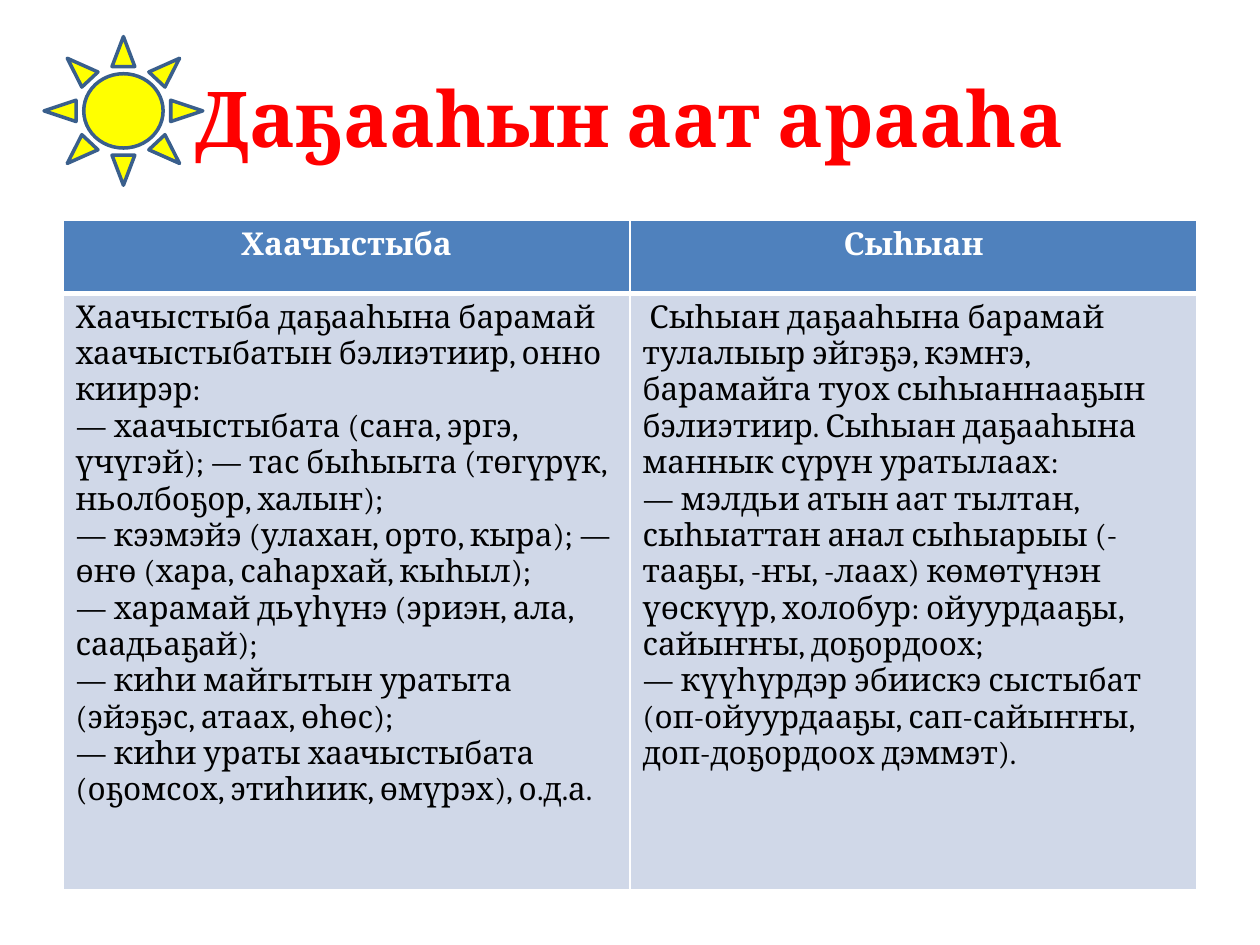
from lxml.etree import SubElement
from pptx import Presentation
from pptx.dml.color import RGBColor
from pptx.enum.shapes import MSO_SHAPE
from pptx.enum.text import MSO_ANCHOR, PP_ALIGN
from pptx.oxml.ns import qn
from pptx.util import Inches, Pt

TITLE = "Даҕааһын аат арааһа"
COLUMNS = [
    ("Хаачыстыба", [
        "Хаачыстыба даҕааһына барамай хаачыстыбатын бэлиэтиир, онно киирэр:",
        "— хаачыстыбата (саҥа, эргэ, үчүгэй); — тас быһыыта (төгүрүк, ньолбоҕор, халыҥ);",
        "— кээмэйэ (улахан, орто, кыра); — өҥө (хара, саһархай, кыһыл);",
        "— харамай дьүһүнэ (эриэн, ала, саадьаҕай);",
        "— киһи майгытын уратыта (эйэҕэс, атаах, өһөс);",
        "— киһи ураты хаачыстыбата (оҕомсох, этиһиик, өмүрэх), о.д.а.",
    ]),
    ("Сыһыан", [
        " Сыһыан даҕааһына барамай тулалыыр эйгэҕэ, кэмҥэ, барамайга туох сыһыаннааҕын "
        "бэлиэтиир. Сыһыан даҕааһына маннык сүрүн уратылаах:",
        "— мэлдьи атын аат тылтан, сыһыаттан анал сыһыарыы (-тааҕы, -ҥы, -лаах) көмөтүнэн "
        "үөскүүр, холобур: ойуурдааҕы, сайыҥҥы, доҕордоох;",
        "— күүһүрдэр эбиискэ сыстыбат (оп-ойуурдааҕы, сап-сайыҥҥы, доп-доҕордоох дэммэт).",
    ]),
]
THEME = {
    "font": "Cambria", "title_size": 44, "text_size": 18,
    "title": "FF0000", "text": "000000", "white": "FFFFFF",
    "header": "4F81BD", "body": "D0D8E8", "sun": "FFFF00", "sun_line": "3A5F8C",
}
MARGIN = 0.5
TABLE_TOP = 1.75
ROW_HEIGHTS = (0.58, 4.73)


def color(name):
    return RGBColor.from_string(THEME[name])


def format_paragraph(paragraph, size, color_name, bold, alignment):
    paragraph.alignment = alignment
    font = paragraph.font
    font.name = THEME["font"]
    font.size = Pt(THEME[size])
    font.bold = bold
    font.color.rgb = color(color_name)


def set_borders(cell, top, bottom):
    properties = cell._tc.get_or_add_tcPr()
    for side, width in (("L", 1), ("R", 1), ("T", top), ("B", bottom)):
        line = SubElement(properties, qn(f"a:ln{side}"), w=str(Pt(width)))
        fill = SubElement(line, qn("a:solidFill"))
        SubElement(fill, qn("a:srgbClr"), val=THEME["white"])


def fill_cell(cell, lines, fill_name, color_name, bold, alignment, top, bottom):
    set_borders(cell, top, bottom)
    cell.fill.solid()
    cell.fill.fore_color.rgb = color(fill_name)
    cell.text = "\n".join(lines)
    for paragraph in cell.text_frame.paragraphs:
        format_paragraph(paragraph, "text_size", color_name, bold, alignment)


def add_title(slide):
    title = slide.shapes.title
    title.left, title.top = Inches(MARGIN), Inches(0.3)
    title.width, title.height = Inches(10 - 2 * MARGIN), Inches(1.25)
    title.text_frame.text = TITLE
    title.text_frame.vertical_anchor = MSO_ANCHOR.MIDDLE
    format_paragraph(title.text_frame.paragraphs[0], "title_size", "title", True, PP_ALIGN.CENTER)


def add_comparison(slide):
    table = slide.shapes.add_table(
        len(ROW_HEIGHTS), len(COLUMNS), Inches(MARGIN), Inches(TABLE_TOP),
        Inches(10 - 2 * MARGIN), Inches(sum(ROW_HEIGHTS))).table
    for row, height in zip(table.rows, ROW_HEIGHTS):
        row.height = Inches(height)
    for index, (heading, lines) in enumerate(COLUMNS):
        fill_cell(table.cell(0, index), [heading], "header", "white", True, PP_ALIGN.CENTER, 1, 3)
        fill_cell(table.cell(1, index), lines, "body", "text", False, PP_ALIGN.LEFT, 3, 1)


def add_sun(slide):
    sun = slide.shapes.add_shape(
        MSO_SHAPE.SUN, Inches(0.35), Inches(0.29), Inches(1.26), Inches(1.18))
    sun.shadow.inherit = False
    sun.fill.solid()
    sun.fill.fore_color.rgb = color("sun")
    sun.line.color.rgb = color("sun_line")
    sun.line.width = Pt(2)


def main():
    presentation = Presentation()
    presentation.slide_width, presentation.slide_height = Inches(10), Inches(7.5)
    slide = presentation.slides.add_slide(presentation.slide_layouts.get_by_name("Title Only"))
    add_title(slide)
    add_comparison(slide)
    add_sun(slide)
    presentation.save("out.pptx")


if __name__ == "__main__":
    main()
